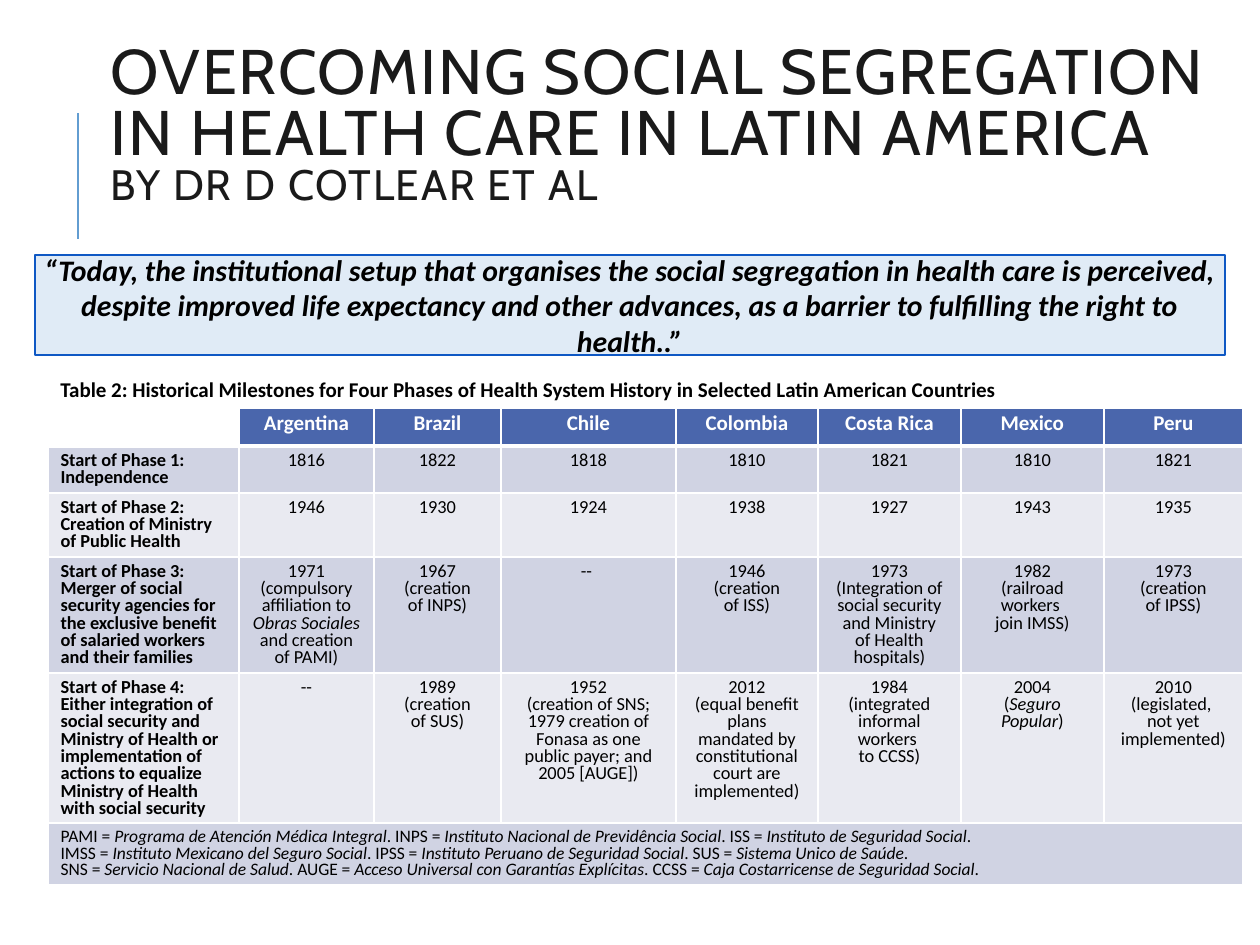
from lxml import etree
from pptx import Presentation
from pptx import util as u
from pptx.dml.color import RGBColor
from pptx.enum import shapes, text
from pptx.oxml.ns import qn

EMU_PER_PX = 914400 / 126
LEFT, CENTER = text.PP_ALIGN.LEFT, text.PP_ALIGN.CENTER

COLUMNS = [191, 135, 127, 175, 142, 143, 143, 139]
ROWS = [35, 47, 64, 116, 150, 61]
HEADINGS = ["", "Argentina", "Brazil", "Chile", "Colombia", "Costa Rica", "Mexico", "Peru"]
PHASES = [
    ["Start of Phase 1: Independence",
     "1816", "1822", "1818", "1810", "1821", "1810", "1821"],
    ["Start of Phase 2: Creation of Ministry of Public Health",
     "1946", "1930", "1924", "1938", "1927", "1943", "1935"],
    ["Start of Phase 3: Merger of social security agencies for the exclusive benefit "
     "of salaried workers and their families",
     "1971\n(compulsory affiliation to *Obras Sociales *and creation\vof PAMI)",
     "1967\n(creation\vof INPS)",
     "-- ",
     "1946\v(creation\vof ISS)",
     "1973\n(Integration of social security and Ministry\vof Health hospitals)",
     "1982\n(railroad workers \vjoin IMSS)",
     "1973\n(creation\vof IPSS)"],
    ["Start of Phase 4: Either integration of social security and Ministry of Health or "
     "implementation of actions to equalize Ministry of Health with social security",
     "--",
     "1989\n(creation\vof SUS)",
     "1952\n(creation of SNS; 1979 creation of Fonasa as one public payer; and 2005 [AUGE])",
     "2012\v(equal benefit plans mandated by constitutional court are implemented)",
     "1984\v(integrated informal workers \vto CCSS)",
     "2004\v(*Seguro Popular*)",
     "2010\v(legislated, \vnot yet implemented)"],
]
ABBREVIATIONS = (
    "PAMI = *Programa de Atención Médica Integral*. INPS = *Instituto Nacional de Previdência "
    "Social*. ISS = *Instituto de Seguridad Social*. \vIMSS = *Instituto Mexicano del Seguro "
    "Social*. IPSS = *Instituto Peruano de Seguridad Social*. SUS = *Sistema Unico de Saúde*. "
    "\vSNS = *Servicio Nacional de Salud*. AUGE = *Acceso Universal con Garantías Explícitas*. "
    "CCSS = *Caja Costarricense de Seguridad Social*.")


def px(*lengths):
    return [u.Emu(round(length * EMU_PER_PX)) for length in lengths]


def color(value):
    return RGBColor.from_string(value)


class Page:
    body_font = "Calibri"
    title_font = "Cabin"
    black = "000000"
    white = "FFFFFF"
    header = "4A66AC"
    bands = ["D0D3E3", "E9EAF1"]

    def __init__(self, deck):
        self.slide = deck.slides.add_slide(deck.slide_layouts[5])

    def style(self, font, size, ink, bold=False, italic=None, name=None):
        font.name = name or self.body_font
        font.size = u.Pt(size)
        font.color.rgb = color(ink)
        font.bold = bold
        font.italic = italic

    def fill_text(self, frame, content, size, ink, align=LEFT, bold=False, italic=None,
                  spacing=None):
        for index, line in enumerate(content.split("\n")):
            para = frame.add_paragraph() if index else frame.paragraphs[0]
            para.alignment = align
            para.line_spacing = spacing
            self.style(para.font, size, ink, bold, italic)
            for part, words in enumerate(line.split("*")):
                for row, piece in enumerate(words.split("\v")):
                    if row:
                        para.add_line_break()
                    if piece:
                        span = para.add_run()
                        span.text = piece
                        if part % 2:
                            span.font.italic = True
            if not line:
                etree.SubElement(para._p, qn("a:endParaRPr"), sz=str(size * 100))

    def title(self, bounds, lines):
        box = self.slide.shapes.title
        box.left, box.top, box.width, box.height = px(*bounds)
        frame = box.text_frame
        frame.word_wrap = True
        frame.auto_size = text.MSO_AUTO_SIZE.NONE
        frame.vertical_anchor = text.MSO_ANCHOR.MIDDLE
        para = frame.paragraphs[0]
        para.alignment = LEFT
        para.line_spacing = 0.8
        for index, (words, size) in enumerate(lines):
            if index:
                para.add_line_break()
            span = para.add_run()
            span.text = words
            self.style(span.font, size, "1A1A1A", name=self.title_font)
            span._r.get_or_add_rPr().set("spc", "100")

    def rule(self, start, end):
        line = self.slide.shapes.add_connector(
            shapes.MSO_CONNECTOR.STRAIGHT, *px(*start), *px(*end))
        line.line.color.rgb = color("629DD1")
        line.line.width = u.Pt(1.5)
        etree.SubElement(line._element.spPr, qn("a:effectLst"))

    def caption(self, bounds, content):
        box = self.slide.shapes.add_textbox(*px(*bounds))
        box.text_frame.word_wrap = True
        self.fill_text(box.text_frame, content, 12, self.black, bold=True)

    def quote(self, bounds, content):
        box = self.slide.shapes.add_shape(shapes.MSO_SHAPE.RECTANGLE, *px(*bounds))
        box.shadow.inherit = False
        box.fill.solid()
        box.fill.fore_color.rgb = color("E0EBF6")
        box.line.color.rgb = color("0E58C4")
        box.line.width = u.Pt(1.25)
        frame = box.text_frame
        frame.word_wrap = True
        frame.vertical_anchor = text.MSO_ANCHOR.MIDDLE
        frame.margin_left, frame.margin_right = px(4, 4)
        self.fill_text(frame, content, 17, self.black, CENTER, bold=True, italic=True)

    def borders(self, cell, bottom):
        props = cell._tc.get_or_add_tcPr()
        for index, (side, width) in enumerate([("L", 1), ("R", 1), ("T", 1), ("B", bottom)]):
            edge = etree.Element(qn(f"a:ln{side}"), w=str(u.Pt(width)))
            fill = etree.SubElement(edge, qn("a:solidFill"))
            etree.SubElement(fill, qn("a:srgbClr"), val=self.white)
            props.insert(index, edge)

    def cell(self, cell, content, fill, size, ink, align, bold, bottom=1):
        if fill:
            cell.fill.solid()
            cell.fill.fore_color.rgb = color(fill)
        else:
            cell.fill.background()
        self.borders(cell, bottom)
        self.fill_text(cell.text_frame, content, size, ink, align, bold, spacing=0.78)

    def milestones(self, left, top):
        bounds = px(left, top, sum(COLUMNS), sum(ROWS))
        table = self.slide.shapes.add_table(len(ROWS), len(COLUMNS), *bounds).table
        for column, width in zip(table.columns, px(*COLUMNS)):
            column.width = width
        for row, height in zip(table.rows, px(*ROWS)):
            row.height = height
        for index, heading in enumerate(HEADINGS):
            self.cell(table.cell(0, index), heading, self.header if heading else None,
                      12, self.white, CENTER, True, bottom=3)
        for number, phase in enumerate(PHASES):
            for index, content in enumerate(phase):
                self.cell(table.cell(number + 1, index), content, self.bands[number % 2],
                          10.5, self.black, CENTER if index else LEFT, index == 0)
        last = len(ROWS) - 1
        table.cell(last, 0).merge(table.cell(last, len(COLUMNS) - 1))
        self.cell(table.cell(last, 0), ABBREVIATIONS, self.bands[0], 10, self.black, LEFT, False)


def main():
    deck = Presentation()
    deck.slide_width, deck.slide_height = px(1260, 945)
    page = Page(deck)
    page.rule((78, 239), (78, 113))
    page.title((98, 24, 1137, 207), [
        ("OVERCOMING SOCIAL SEGREGATION IN HEALTH CARE IN LATIN AMERICA ", 36),
        ("BY DR D COTLEAR ET AL", 24.3)])
    page.caption((48, 370, 1128, 38),
                 "Table 2: Historical Milestones for Four Phases of Health System History "
                 "in Selected Latin American Countries")
    page.milestones(48, 408)
    page.quote((35, 255, 1190, 100),
               "“Today, the institutional setup that organises the social segregation in health "
               "care is perceived, despite improved life expectancy and other advances, as a "
               "barrier to fulfilling the right to health..”")
    deck.save("out.pptx")


if __name__ == "__main__":
    main()
